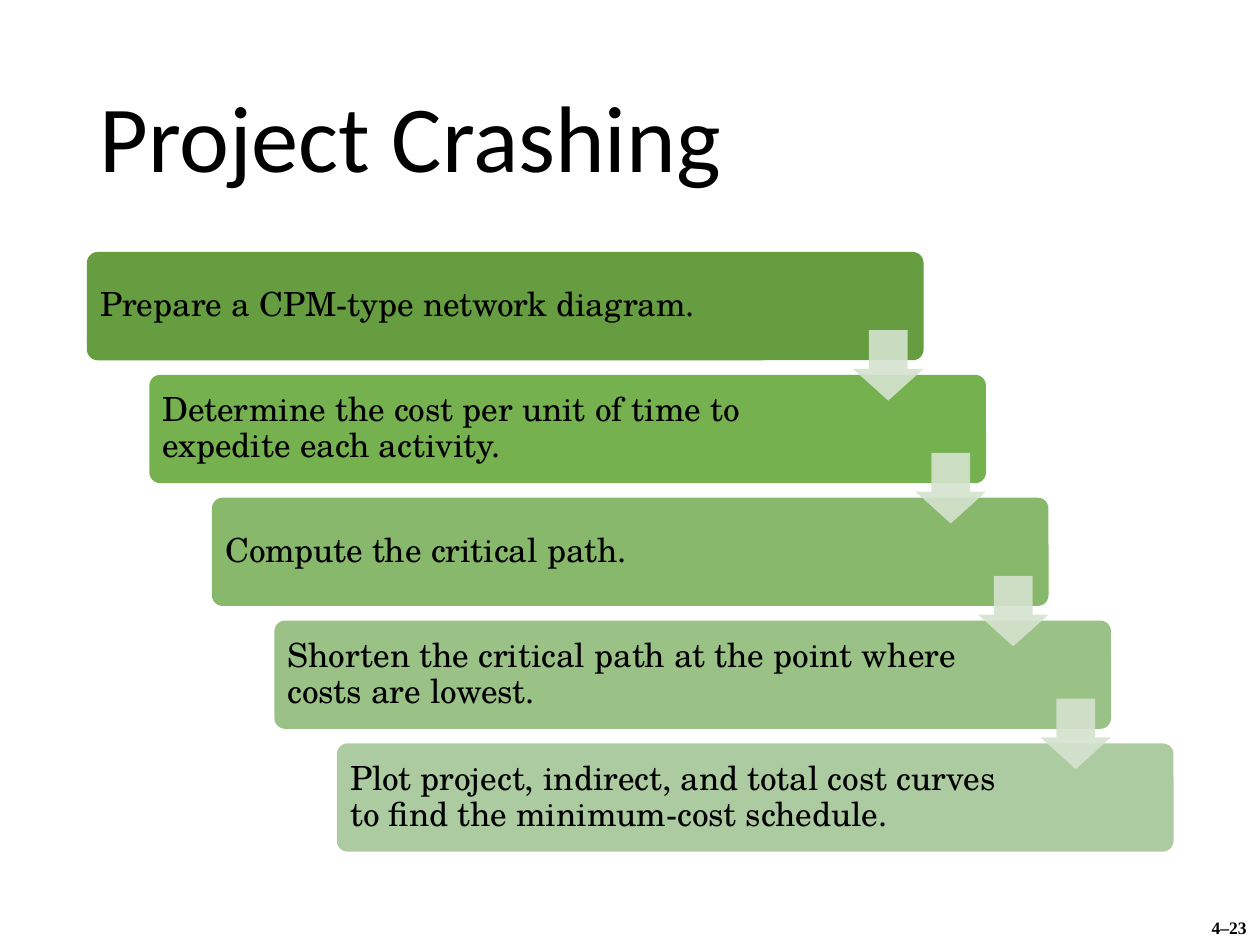
"""Build the Project Crashing slide: five staggered steps joined by arrows."""
from lxml import etree
from pptx import Presentation
from pptx.dml.color import RGBColor
from pptx.enum.shapes import MSO_SHAPE as Shape
from pptx.enum.text import MSO_ANCHOR as Anchor, PP_ALIGN as Align
from pptx.oxml.ns import qn
from pptx.util import Inches, Pt

BLACK = RGBColor(0x00, 0x00, 0x00)
ARROW_GREEN = RGBColor(0xD5, 0xE3, 0xCF)
STEPS = [
    ("Prepare a CPM-type network diagram.", RGBColor(0x66, 0x9D, 0x40)),
    ("Determine the cost per unit of time to expedite each activity.", RGBColor(0x75, 0xB1, 0x4F)),
    ("Compute the critical path.", RGBColor(0x87, 0xB8, 0x6B)),
    ("Shorten the critical path at the point where costs are lowest.", RGBColor(0x9A, 0xC1, 0x86)),
    ("Plot project, indirect, and total cost curves to find the minimum-cost schedule.",
     RGBColor(0xAD, 0xCB, 0xA0)),
]
LEFT, TOP = 0.69, 2
COLUMN, ROW = 0.496, 0.975
BAR_WIDTH, BAR_HEIGHT = 6.64, 0.86
ARROW_SIZE = 0.56
INSET = 0.025

presentation = Presentation()
presentation.slide_width, presentation.slide_height = Inches(10), Inches(7.5)
slide = presentation.slides.add_slide(presentation.slide_layouts[6])


def add_text(text, left, top, width, height, *, size, font, bold=False, wrap=True,
             align=Align.LEFT, anchor=Anchor.MIDDLE, line_spacing=0.9, margin=None):
    box = slide.shapes.add_textbox(Inches(left), Inches(top), Inches(width), Inches(height))
    frame = box.text_frame
    frame.word_wrap = wrap
    frame.vertical_anchor = anchor
    if margin is not None:
        frame.margin_left = frame.margin_right = Inches(margin)
        frame.margin_top = frame.margin_bottom = Inches(margin)
    paragraph = frame.paragraphs[0]
    paragraph.alignment = align
    paragraph.line_spacing = line_spacing
    run = paragraph.add_run()
    run.text = text
    run.font.size, run.font.name, run.font.bold = Pt(size), font, bold
    run.font.color.rgb = BLACK


def add_filled(kind, left, top, width, height, color, adjustments):
    shape = slide.shapes.add_shape(kind, Inches(left), Inches(top), Inches(width), Inches(height))
    shape.shadow.inherit = False
    shape.fill.solid()
    shape.fill.fore_color.rgb = color
    shape.line.fill.background()
    for index, value in enumerate(adjustments):
        shape.adjustments[index] = value
    return shape


add_text("4–23", 9.5, 7.23, 0.51, 0.27, size=10, font="Times New Roman", bold=True,
         wrap=False, align=Align.CENTER, anchor=Anchor.TOP, line_spacing=1.0)
add_text("Project Crashing", LEFT, 0.4, 8.62, 1.45, size=54, font="Calibri")

for index, (text, color) in enumerate(STEPS):
    left, top = LEFT + index * COLUMN, TOP + index * ROW
    text_width = 5.54 if index else 5.62
    add_filled(Shape.ROUNDED_RECTANGLE, left, top, BAR_WIDTH, BAR_HEIGHT, color, [0.1])
    add_text(text, left + INSET, top + INSET, text_width, BAR_HEIGHT - 2 * INSET,
             size=19, font="TeX Gyre Schola", margin=0.08)

for index in range(len(STEPS) - 1):
    left = LEFT + BAR_WIDTH - ARROW_SIZE + index * COLUMN
    arrow = add_filled(Shape.DOWN_ARROW, left, TOP + 0.62 + index * ROW,
                       ARROW_SIZE, ARROW_SIZE, ARROW_GREEN, [0.55, 0.45])
    arrow_color = arrow.element.spPr.find(qn("a:solidFill")).find(qn("a:srgbClr"))
    etree.SubElement(arrow_color, qn("a:alpha")).set("val", "90000")

presentation.save("out.pptx")
